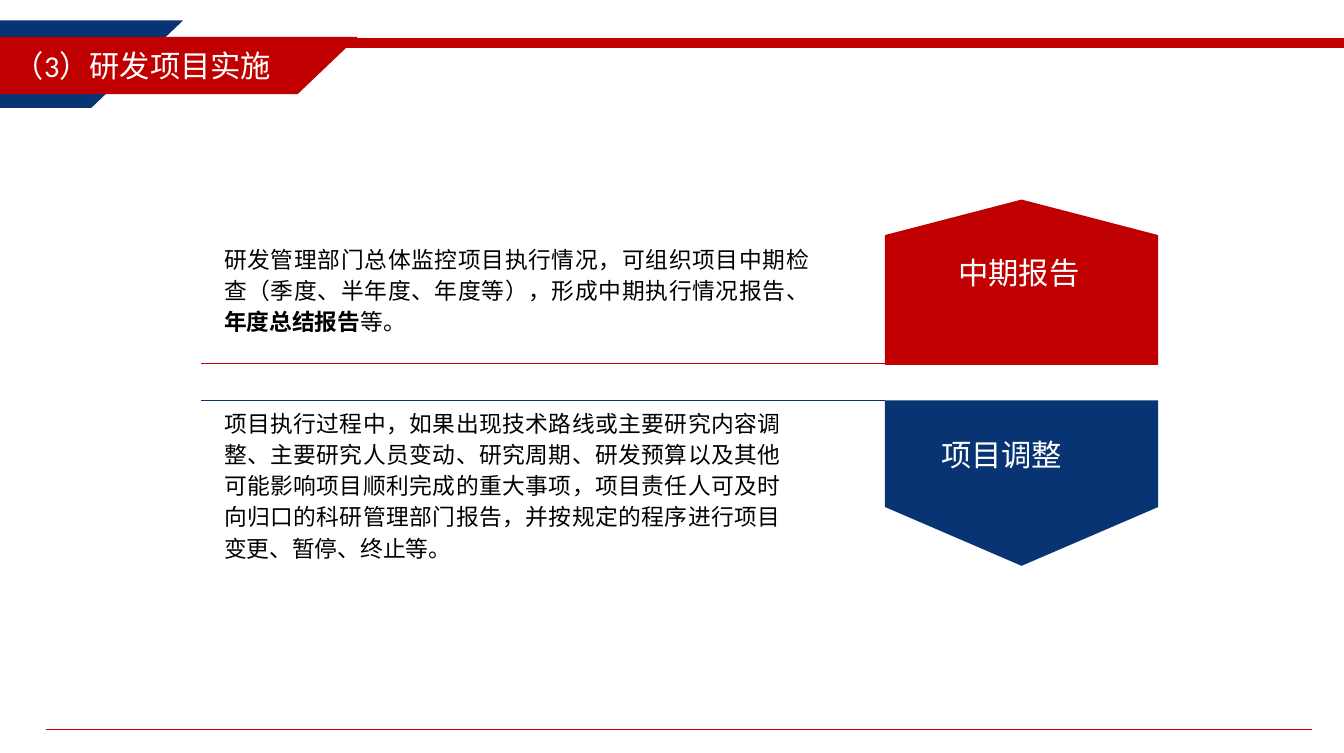
from lxml import etree
from pptx import Presentation
from pptx import util as u
from pptx.dml.color import RGBColor
from pptx.enum import shapes, text
from pptx.oxml.ns import qn

COLORS = {"red": "C00000", "navy": "083473", "white": "FFFFFF", "black": "000000"}
CJK = "Noto Sans CJK SC"
W, H = u.Inches(9.84), u.Inches(5.51)

prs = Presentation()
prs.slide_width, prs.slide_height = W, H
s = prs.slides.add_slide(prs.slide_layouts[6])


def share(x, y, *size):
    return [round(v * side / 100) for v, side in zip((x, y, *size), (W, H, W, H))]


def add_run(p, words, size, color, font=CJK, bold=False):
    r = p.add_run()
    r.text = words
    r.font.size, r.font.name, r.font.bold = u.Pt(size), font, bold
    r.font.color.rgb = RGBColor.from_string(COLORS[color])
    etree.SubElement(r._r.get_or_add_rPr(), qn("a:ea")).set("typeface", CJK)


banners = [
    ("navy", (-8.23, 2.72, 21.85, 11.62), ""),
    ("red", (-5.39, 4.9, 32.01, 7.62), "（3）研发项目实施"),
    ("red", (21.65, 5.08, 83.03, 1.27), ""),
]
for color, place, title in banners:
    sp = s.shapes.add_shape(shapes.MSO_SHAPE.PARALLELOGRAM, *share(*place))
    sp.adjustments[0] = 1.05
    sp.shadow.inherit = False
    sp.fill.solid()
    sp.fill.fore_color.rgb = RGBColor.from_string(COLORS[color])
    sp.line.fill.background()
    if title:
        tf = sp.text_frame
        tf.word_wrap = False
        tf.vertical_anchor = text.MSO_ANCHOR.MIDDLE
        p = tf.paragraphs[0]
        p.alignment = text.PP_ALIGN.CENTER
        add_run(p, title, 16, "white", "Calibri")

left, right = 65.85, 86.18
middle = (left + right) / 2
arrows = [("red", 48.46, 31.22, 26.5), ("navy", 53.18, 67.33, 75.14)]
for color, base, shoulder, tip in arrows:
    outline = [(left, base), (left, shoulder), (middle, tip), (right, shoulder), (right, base)]
    points = [share(*point) for point in outline]
    fb = s.shapes.build_freeform(*points[0])
    fb.add_line_segments(points[1:], close=True)
    sp = fb.convert_to_shape()
    sp.shadow.inherit = False
    sp.fill.solid()
    sp.fill.fore_color.rgb = RGBColor.from_string(COLORS[color])
    sp.line.fill.background()

rules = [("red", 3.46, 97.66, 96.91), ("red", left, 14.94, 48.28), ("navy", left, 14.94, 53.18)]
for color, start, end, y in rules:
    line = s.shapes.add_connector(shapes.MSO_CONNECTOR.STRAIGHT, *share(start, y, end, y))
    line.line.width = u.Pt(0.5)
    line.line.color.rgb = RGBColor.from_string(COLORS[color])
    etree.SubElement(line._element.spPr, qn("a:effectLst"))

JUSTIFY, CENTER, LEFT = text.PP_ALIGN.JUSTIFY, text.PP_ALIGN.CENTER, text.PP_ALIGN.LEFT
boxes = [
    ((15.96, 31.4, 45.02, 14.34), JUSTIFY, 12, "black", 1.14, [
        ("研发管理部门总体监控项目执行情况，可组织项目中期检查（季度、半年度、年度等），形成中期执行情况报告、", False),
        ("年度总结报告", True),
        ("等。", False),
    ]),
    ((15.96, 53.18, 42.89, 22.14), JUSTIFY, 12, "black", 1.14, [
        ("项目执行过程中，如果出现技术路线或主要研究内容调整、主要研究人员变动、研究周期、研发预算以及其他"
         "可能影响项目顺利完成的重大事项，项目责任人可及时向归口的科研管理部门报告，并按规定的程序进行项目"
         "变更、暂停、终止等。", False),
    ]),
    ((68.09, 33.03, 15.45, 6.17), CENTER, 16, "white", 1.0, [("中期报告", False)]),
    ((69.31, 57.17, 16.36, 6.17), LEFT, 16, "white", 1.0, [("项目调整", False)]),
]
for place, align, size, color, spacing, runs in boxes:
    tf = s.shapes.add_textbox(*share(*place)).text_frame
    tf.word_wrap = True
    tf.margin_left = tf.margin_right = u.Inches(0.07)
    tf.margin_top = tf.margin_bottom = u.Inches(0.04)
    p = tf.paragraphs[0]
    p.alignment, p.line_spacing = align, spacing
    for words, bold in runs:
        add_run(p, words, size, color, bold=bold)

prs.save("out.pptx")
